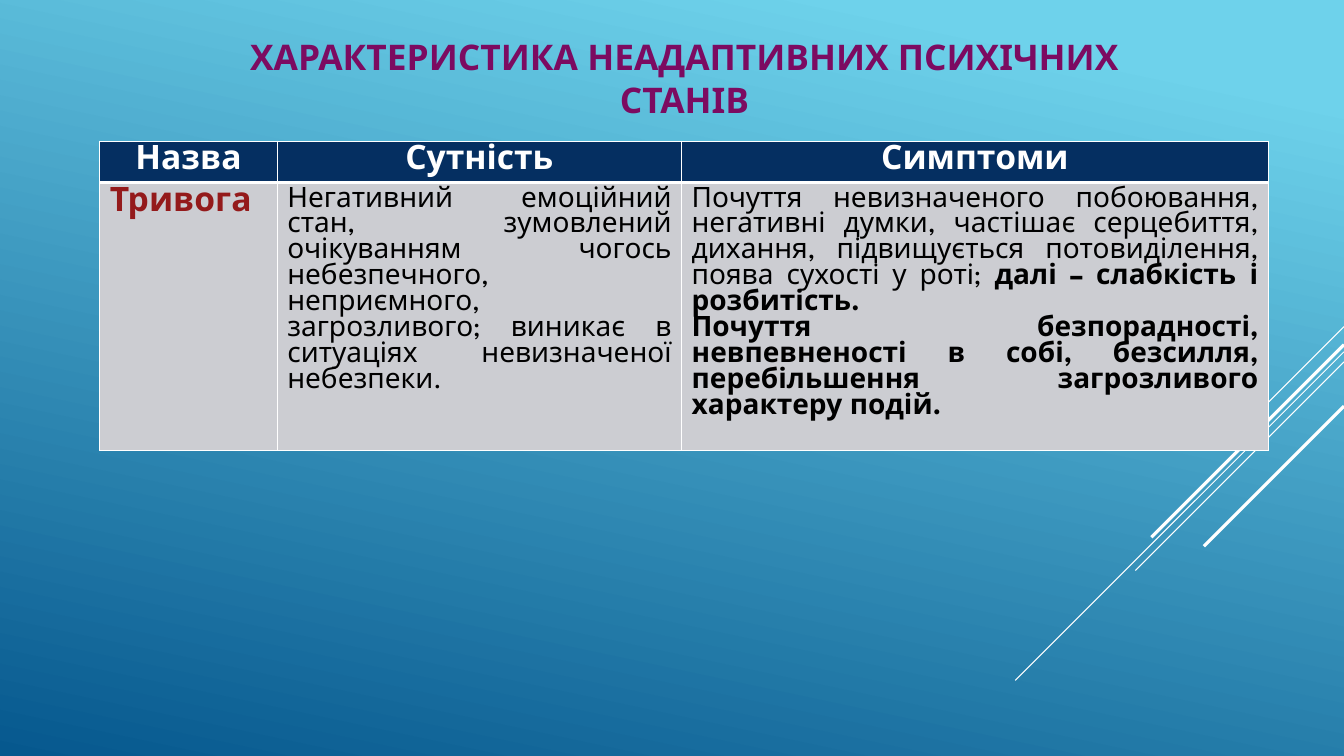
from dataclasses import dataclass

from lxml import etree
from pptx import Presentation
from pptx.dml.color import RGBColor
from pptx.enum.shapes import MSO_CONNECTOR
from pptx.enum.text import MSO_ANCHOR, PP_ALIGN
from pptx.oxml.ns import qn
from pptx.util import Inches, Pt

STRAIGHT = MSO_CONNECTOR.STRAIGHT
MIDDLE = MSO_ANCHOR.MIDDLE
CENTER, JUSTIFY = PP_ALIGN.CENTER, PP_ALIGN.JUSTIFY


@dataclass(frozen=True)
class Theme:
    font: str = "League Spartan"
    title_size: float = 25.2
    title_spacing: float = 30.7
    label_size: float = 24
    body_size: float = 20
    sky: str = "6ED2EB"
    deep_blue: str = "06588E"
    white: str = "FFFFFF"
    black: str = "000000"
    purple: str = "7C0B61"
    navy: str = "052F61"
    red: str = "941A1B"
    grey: str = "CCCDD2"


THEME = Theme()
SLIDE_WIDTH, SLIDE_HEIGHT = 13.33, 7.5

# Diagonals leaving the right edge: start height, run, line width
RAYS = [(3.24, 1, 0.75), (3.49, 3.26, 0.75), (3.59, 2.07, 0.75),
        (3.42, 1.91, 2.25), (4.03, 1.39, 2.25)]

TITLE = "ХАРАКТЕРИСТИКА НЕАДАПТИВНИХ ПСИХІЧНИХ СТАНІВ"
HEADINGS = ["Назва", "Сутність", "Симптоми"]
STATE = "Тривога"
ESSENCE = ("Негативний емоційний стан, зумовлений очікуванням чогось "
           "небезпечного, неприємного, загрозливого; виникає в ситуаціях "
           "невизначеної небезпеки.")
# Each paragraph is a list of (text, bold) runs
SYMPTOMS = [
    [("Почуття невизначеного побоювання, негативні думки, частішає "
      "серцебиття, дихання, підвищується потовиділення, поява сухості "
      "у роті; ", False),
     ("далі – слабкість і розбитість.", True)],
    [("Почуття безпорадності, невпевненості в собі, безсилля, "
      "перебільшення загрозливого характеру подій.", True)],
]
COLUMN_WIDTHS = [1.76, 4.01, 5.82]
ROW_HEIGHTS = [0.41, 2.66]


def rgb(value):
    return RGBColor.from_string(value)


def set_background(slide):
    fill = slide.background.fill
    fill.gradient()
    fill.gradient_angle = 360 - 102
    stops = [(0.1, THEME.sky), (1, THEME.deep_blue)]
    for stop, (position, color) in zip(fill.gradient_stops, stops):
        stop.position = position
        stop.color.rgb = rgb(color)


def add_ray(slide, top, run, width):
    ray = slide.shapes.add_connector(
        STRAIGHT, Inches(SLIDE_WIDTH), Inches(top),
        Inches(SLIDE_WIDTH - run), Inches(top + run))
    ray.line.color.rgb = rgb(THEME.white)
    ray.line.width = Pt(width)
    etree.SubElement(ray._element.spPr, qn("a:effectLst"))


def style_paragraph(paragraph, size, color, align, bold=None):
    paragraph.alignment = align
    font = paragraph.font
    font.name, font.size, font.bold = THEME.font, Pt(size), bold
    font.color.rgb = rgb(color)


def set_title(slide):
    title = slide.shapes.title
    title.left, title.top = Inches(1.81), Inches(0.33)
    title.width, title.height = Inches(9.96), Inches(0.88)
    frame = title.text_frame
    frame.text = TITLE
    frame.word_wrap = True
    frame.vertical_anchor = MIDDLE
    heading = frame.paragraphs[0]
    style_paragraph(heading, THEME.title_size, THEME.purple, CENTER, True)
    heading.line_spacing = Pt(THEME.title_spacing)


def set_borders(cell, bottom_width):
    properties = cell._tc.get_or_add_tcPr()
    sides = [("L", 1), ("R", 1), ("T", 1), ("B", bottom_width)]
    for index, (side, width) in enumerate(sides):
        border = etree.Element(qn(f"a:ln{side}"), w=str(Pt(width)))
        solid = etree.SubElement(border, qn("a:solidFill"))
        etree.SubElement(solid, qn("a:srgbClr"), val=THEME.white)
        properties.insert(index, border)


def fill_cell(cell, paragraphs, size, color, align, background, bottom=1):
    cell.fill.solid()
    cell.fill.fore_color.rgb = rgb(background)
    set_borders(cell, bottom)
    frame = cell.text_frame
    for index, runs in enumerate(paragraphs):
        paragraph = frame.add_paragraph() if index else frame.paragraphs[0]
        weights = {bold for _, bold in runs}
        shared = weights.pop() if len(weights) == 1 else None
        style_paragraph(paragraph, size, color, align, shared)
        for text, bold in runs:
            run = paragraph.add_run()
            run.text = text
            if shared is None:
                run.font.bold = bold


def add_states_table(slide):
    table = slide.shapes.add_table(
        len(ROW_HEIGHTS), len(COLUMN_WIDTHS), Inches(0.99), Inches(1.4),
        Inches(sum(COLUMN_WIDTHS)), Inches(sum(ROW_HEIGHTS))).table
    for column, width in zip(table.columns, COLUMN_WIDTHS):
        column.width = Inches(width)
    for row, height in zip(table.rows, ROW_HEIGHTS):
        row.height = Inches(height)

    # Header row
    for column, heading in enumerate(HEADINGS):
        fill_cell(table.cell(0, column), [[(heading, True)]],
                  THEME.label_size, THEME.white, CENTER, THEME.navy, 3)

    # Description of the state
    descriptions = [
        ([[(STATE, True)]], THEME.label_size, THEME.red),
        ([[(ESSENCE, False)]], THEME.body_size, THEME.black),
        (SYMPTOMS, THEME.body_size, THEME.black),
    ]
    for column, (paragraphs, size, color) in enumerate(descriptions):
        fill_cell(table.cell(1, column), paragraphs, size, color,
                  JUSTIFY, THEME.grey)


def main():
    presentation = Presentation()
    presentation.slide_width = Inches(SLIDE_WIDTH)
    presentation.slide_height = Inches(SLIDE_HEIGHT)
    title_only = presentation.slide_layouts[5]
    slide = presentation.slides.add_slide(title_only)

    set_background(slide)
    for top, run, width in RAYS:
        add_ray(slide, top, run, width)
    set_title(slide)
    add_states_table(slide)

    presentation.save("out.pptx")


if __name__ == "__main__":
    main()
